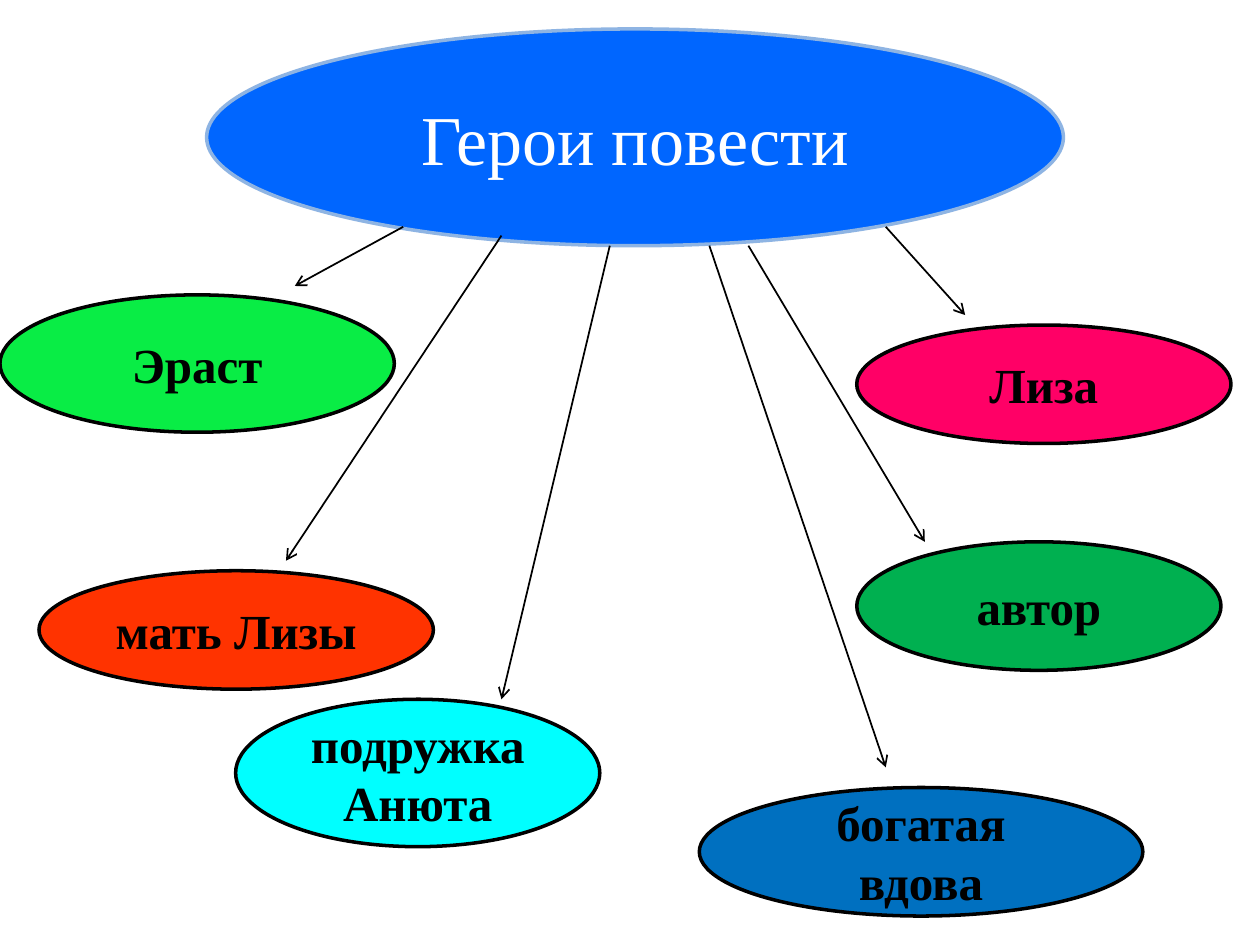
from dataclasses import dataclass

import pptx
import pptx.dml.color
import pptx.enum.shapes
import pptx.enum.text
import pptx.oxml.ns
import pptx.slide
import pptx.util
from lxml import etree
from pptx.util import Inches


@dataclass
class Bubble:
    """An ellipse with a caption; lengths are in inches."""

    text: str
    left: float
    top: float
    width: float
    height: float
    fill: str
    outline: str = "000000"
    font_color: str = "000000"
    font_size: int = 28
    bold: bool = True


@dataclass
class Arrow:
    """A straight arrow; coordinates are in inches."""

    start_x: float
    start_y: float
    end_x: float
    end_y: float


TITLE = Bubble("Герои повести", 1.64, 0.23, 6.8, 1.72, "0066FF", "8EB4E3", "FFFFFF", 40, False)

HEROES = [
    Bubble("Эраст", 0, 2.34, 3.13, 1.09, "09ED45"),
    Bubble("Лиза", 6.8, 2.58, 2.97, 0.94, "FF0066"),
    Bubble("автор", 6.8, 4.3, 2.89, 1.02, "00B050"),
    Bubble("мать Лизы", 0.31, 4.53, 3.13, 0.94, "FF3300"),
    Bubble("богатая вдова", 5.55, 6.25, 3.52, 1.02, "0070C0"),
    Bubble("подружка Анюта", 1.87, 5.55, 2.89, 1.17, "00FFFF"),
]

ARROWS = [
    Arrow(3.2, 1.8, 2.34, 2.27),
    Arrow(7.03, 1.8, 7.66, 2.5),
    Arrow(5.94, 1.95, 7.34, 4.3),
    Arrow(3.98, 1.87, 2.27, 4.45),
    Arrow(5.63, 1.95, 7.03, 6.09),
    Arrow(4.84, 1.95, 3.98, 5.55),
]


def color(value: str) -> pptx.dml.color.RGBColor:
    """Turn a hex string into a colour."""
    return pptx.dml.color.RGBColor.from_string(value)


def draw_bubble(slide: pptx.slide.Slide, bubble: Bubble) -> None:
    """Draw a filled ellipse with centred text."""
    shape = slide.shapes.add_shape(
        pptx.enum.shapes.MSO_SHAPE.OVAL,
        Inches(bubble.left),
        Inches(bubble.top),
        Inches(bubble.width),
        Inches(bubble.height),
    )
    shape.shadow.inherit = False
    shape.fill.solid()
    shape.fill.fore_color.rgb = color(bubble.fill)
    shape.line.color.rgb = color(bubble.outline)
    shape.line.width = pptx.util.Pt(2)
    text_frame = shape.text_frame
    text_frame.text = bubble.text
    text_frame.word_wrap = True
    text_frame.vertical_anchor = pptx.enum.text.MSO_ANCHOR.MIDDLE
    paragraph = text_frame.paragraphs[0]
    paragraph.alignment = pptx.enum.text.PP_ALIGN.CENTER
    font = paragraph.runs[0].font
    font.name = "Times New Roman"
    font.size = pptx.util.Pt(bubble.font_size)
    font.bold = bubble.bold
    font.color.rgb = color(bubble.font_color)


def draw_arrow(slide: pptx.slide.Slide, arrow: Arrow) -> None:
    """Draw a thin black line with an open arrowhead at its end."""
    connector = slide.shapes.add_connector(
        pptx.enum.shapes.MSO_CONNECTOR.STRAIGHT,
        Inches(arrow.start_x),
        Inches(arrow.start_y),
        Inches(arrow.end_x),
        Inches(arrow.end_y),
    )
    connector.line.color.rgb = color("000000")
    connector.line.width = pptx.util.Pt(1)
    qualified = pptx.oxml.ns.qn
    properties = connector.element.spPr
    outline = properties.find(qualified("a:ln"))
    etree.SubElement(outline, qualified("a:tailEnd"), type="arrow")
    etree.SubElement(properties, qualified("a:effectLst"))


def main() -> None:
    """Build the slide and save it."""
    presentation = pptx.Presentation()
    presentation.slide_width = Inches(10)
    presentation.slide_height = Inches(7.5)
    slide = presentation.slides.add_slide(presentation.slide_layouts[6])
    for bubble in [TITLE, *HEROES]:
        draw_bubble(slide, bubble)
    for arrow in ARROWS:
        draw_arrow(slide, arrow)
    presentation.save("out.pptx")


if __name__ == "__main__":
    main()
